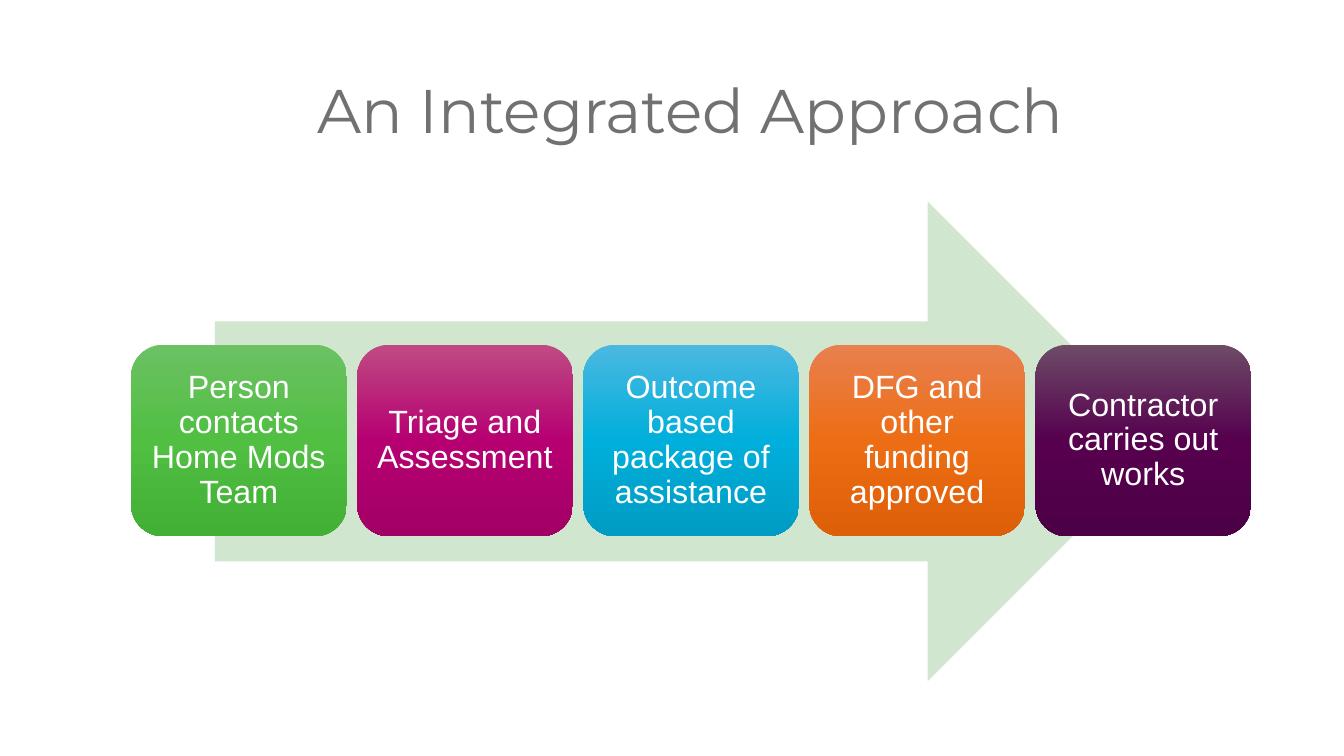
from copy import deepcopy

from pptx import Presentation
from pptx.dml.color import RGBColor
from pptx.enum.shapes import MSO_SHAPE as Shape
from pptx.enum.text import MSO_ANCHOR as Anchor, MSO_AUTO_SIZE as AutoSize, PP_ALIGN as Align
from pptx.oxml.ns import qn
from pptx.util import Inches, Pt

STEPS = [
    ("Person contacts Home Mods Team", ("6CC163", "50BF42", "42AF35")),
    ("Triage and Assessment", ("BF4B83", "B60072", "A20065")),
    ("Outcome based package of assistance", ("4BB8E1", "00AFDB", "009CC3")),
    ("DFG and other funding approved", ("E8804F", "ED6D14", "DD5F07")),
    ("Contractor carries out works", ("6D4B67", "56004E", "4C0045")),
]
ROW_LEFT, ROW_RIGHT = 1.3, 12.41
STEP_TOP, STEP_WIDTH, STEP_HEIGHT = 3.42, 2.14, 1.9


def color(hex_string):
    return RGBColor.from_string(hex_string)


def write(shape, text, size, font_name, font_color, inset=0.1):
    """Put one centred paragraph into the shape."""
    frame = shape.text_frame
    frame.word_wrap = True
    frame.auto_size = AutoSize.NONE
    frame.vertical_anchor = Anchor.MIDDLE
    frame.margin_left = frame.margin_right = Inches(inset)
    frame.margin_top = frame.margin_bottom = Inches(inset)
    frame.text = text
    paragraph = frame.paragraphs[0]
    paragraph.alignment = Align.CENTER
    paragraph.line_spacing = 0.9
    font = paragraph.runs[0].font
    font.size = Pt(size)
    font.name = font_name
    font.color.rgb = color(font_color)


def fill_downward(shape, colors):
    """Fill the shape with evenly spaced colours from top to bottom."""
    fill = shape.fill
    fill.gradient()
    fill.gradient_angle = 270
    stop_list = shape._element.spPr.find(".//" + qn("a:gsLst"))
    while len(stop_list) < len(colors):
        stop_list.append(deepcopy(stop_list[0]))
    for index, (stop, hex_string) in enumerate(zip(fill.gradient_stops, colors)):
        stop.position = index / (len(colors) - 1)
        stop.color.rgb = color(hex_string)


class ProcessSlide:
    title_font = "Montserrat"
    body_font = "Arial"
    title_color = "717073"
    step_text_color = "FFFFFF"
    arrow_color = "D1E6CF"

    def __init__(self, presentation):
        self.slide = presentation.slides.add_slide(presentation.slide_layouts[5])

    def title(self, text, left, top, width, height):
        title = self.slide.shapes.title
        title.left, title.top = Inches(left), Inches(top)
        title.width, title.height = Inches(width), Inches(height)
        write(title, text, 44, self.title_font, self.title_color)

    def shape(self, kind, left, top, width, height):
        shape = self.slide.shapes.add_shape(
            kind, Inches(left), Inches(top), Inches(width), Inches(height))
        shape.shadow.inherit = False
        shape.line.fill.background()
        return shape

    def arrow(self, left, top, width, height):
        arrow = self.shape(Shape.RIGHT_ARROW, left, top, width, height)
        arrow.fill.solid()
        arrow.fill.fore_color.rgb = color(self.arrow_color)

    def step(self, text, colors, left):
        step = self.shape(Shape.ROUNDED_RECTANGLE, left, STEP_TOP, STEP_WIDTH, STEP_HEIGHT)
        fill_downward(step, colors)
        write(step, text, 23, self.body_font, self.step_text_color)


def main():
    presentation = Presentation()
    presentation.slide_width, presentation.slide_height = Inches(13.33), Inches(7.5)
    slide = ProcessSlide(presentation)
    slide.title("An Integrated Approach", 1.29, 0.4, 11.12, 1.45)
    slide.arrow(2.13, 2, 9.45, 4.76)
    pitch = (ROW_RIGHT - ROW_LEFT - STEP_WIDTH) / (len(STEPS) - 1)
    for index, (text, colors) in enumerate(STEPS):
        slide.step(text, colors, ROW_LEFT + index * pitch)
    presentation.save("out.pptx")


if __name__ == "__main__":
    main()
